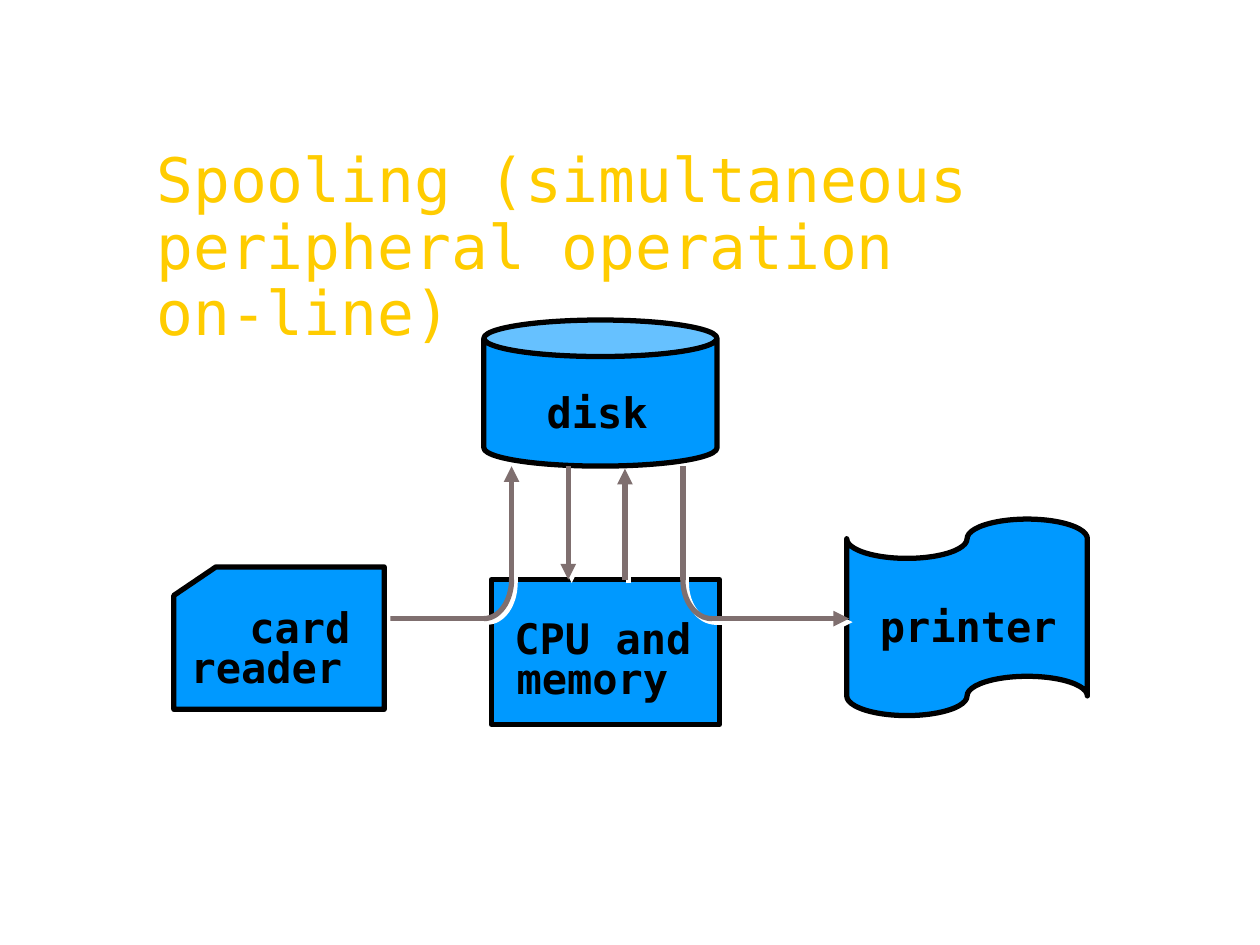
from dataclasses import dataclass
from math import cos, pi, sin

from lxml import etree
from pptx import Presentation
from pptx.dml.color import RGBColor
from pptx.enum.shapes import MSO_CONNECTOR, MSO_SHAPE
from pptx.enum.text import MSO_ANCHOR, PP_ALIGN
from pptx.oxml.ns import qn
from pptx.util import Inches, Pt

CAN = MSO_SHAPE.CAN
TAPE = MSO_SHAPE.FLOWCHART_PUNCHED_TAPE
CARD = MSO_SHAPE.FLOWCHART_CARD
RECT = MSO_SHAPE.RECTANGLE
LINE = MSO_CONNECTOR.STRAIGHT
TOP = MSO_ANCHOR.TOP
LEFT, MID = PP_ALIGN.LEFT, PP_ALIGN.CENTER


@dataclass(frozen=True)
class Theme:
    font: str = "DejaVu Sans Mono"
    title: str = "FFCC00"
    body: str = "0099FF"
    ink: str = "000000"
    flow: str = "7F6F6F"
    shade: str = "FFFFFF"
    big: int = 35
    text: int = 24
    small: int = 20
    line: int = 3


class Deck:
    """Slide with a grid of 100 columns by 75 rows."""

    def __init__(self, theme):
        self.theme = theme
        self.prs = Presentation()
        self.prs.slide_width = Inches(10)
        self.prs.slide_height = Inches(7.5)
        self.slide = self.prs.slides.add_slide(self.prs.slide_layouts[5])
        self.shapes = self.slide.shapes

    def grid(self, *cells):
        step = self.prs.slide_width / 100
        return [round(cell * step) for cell in cells]

    def run(self, para, text, size, color, bold=False):
        run = para.add_run()
        run.text = text
        run.font.name = self.theme.font
        run.font.size = Pt(size)
        run.font.bold = bold
        run.font.color.rgb = RGBColor.from_string(color)

    def title(self, area, lines):
        box = self.shapes.title
        box.left, box.top, box.width, box.height = self.grid(*area)
        frame = box.text_frame
        frame.word_wrap = True
        frame.vertical_anchor = TOP
        para = frame.paragraphs[0]
        para.alignment = LEFT
        para.line_spacing = 0.9
        for i, line in enumerate(lines):
            if i:
                para.add_line_break()
            self.run(para, line, self.theme.big, self.theme.title)

    def finish(self, item, color):
        """Set the outline and a hard offset shadow."""
        item.line.color.rgb = RGBColor.from_string(color)
        item.line.width = Pt(self.theme.line)
        props = item._element.spPr
        fx = etree.SubElement(props, qn("a:effectLst"))
        cast = etree.SubElement(fx, qn("a:outerShdw"), dist=str(Pt(2.8)),
                                dir="2700000", algn="ctr", rotWithShape="0")
        etree.SubElement(cast, qn("a:srgbClr"), val=self.theme.shade)

    def shape(self, kind, area):
        item = self.shapes.add_shape(kind, *self.grid(*area))
        item.fill.solid()
        item.fill.fore_color.rgb = RGBColor.from_string(self.theme.body)
        self.finish(item, self.theme.ink)

    def label(self, area, paras, align=MID, space=1.0, indent=0):
        """Each paragraph is a list of (text, size) runs."""
        frame = self.shapes.add_textbox(*self.grid(*area)).text_frame
        frame.word_wrap = True
        for i, runs in enumerate(paras):
            para = frame.add_paragraph() if i else frame.paragraphs[0]
            para.alignment = align
            para.line_spacing = space
            if indent and not i:
                para._p.get_or_add_pPr().set("marL", str(self.grid(indent)[0]))
            for text, size in runs:
                self.run(para, text, size, self.theme.ink, True)

    def link(self, start, end, head=True):
        item = self.shapes.add_connector(LINE, *self.grid(*start, *end))
        self.finish(item, self.theme.flow)
        if head:
            edge = item._element.spPr.find(qn("a:ln"))
            etree.SubElement(edge, qn("a:tailEnd"), type="triangle")

    def bend(self, hub, wide, high, steps=16):
        """Quarter ellipse from below the hub to its side."""
        x, y = hub
        turns = [pi / 2 * i / steps for i in range(steps + 1)]
        dots = [tuple(self.grid(x + wide * sin(t), y + high * cos(t)))
                for t in turns]
        path = self.shapes.build_freeform(*dots[0])
        path.add_line_segments(dots[1:], close=False)
        item = path.convert_to_shape()
        item.fill.background()
        self.finish(item, self.theme.flow)


def main():
    theme = Theme()
    deck = Deck(theme)
    text, small = theme.text, theme.small
    deck.title((11.4, 11.4, 73.6, 16.7),
               ["Spooling (simultaneous peripheral operation", "on-line)"])

    # Devices
    deck.shape(CAN, (38.4, 25.4, 18.5, 11.6))
    deck.shape(TAPE, (67.2, 41.2, 19.1, 15.6))
    deck.shape(RECT, (39, 46, 18.1, 11.5))

    # Labels
    deck.label((42.4, 30.2, 11.3, 5.1), [[("disk", text)]], LEFT)
    deck.label((38.8, 48.9, 18.1, 8.1),
               [[("CPU and memory", text), (" ", small)]], space=0.8)
    deck.label((65.7, 47.2, 22.3, 4.9), [[("printer", text)]])

    # Rounded paths: card reader to disk, disk to printer
    disk, turn, base = 37, 46, 49.1
    deck.link((27.9, base), (38.4, base), False)
    deck.link((40.6, turn), (40.6, disk))
    deck.bend((38.4, turn), 2.2, base - turn)
    deck.link((54.2, turn), (54.2, disk), False)
    deck.bend((56.5, turn), -2.3, base - turn)
    deck.link((56.4, base), (67.4, base))

    # Disk and CPU exchange
    deck.link((45.1, disk), (45.1, turn))
    deck.link((49.6, turn), (49.6, disk + 0.2))

    # Card reader
    deck.shape(CARD, (13.8, 45, 16.7, 11.3))
    deck.label((13.1, 48, 18.1, 8.3),
               [[("card", text)], [("reader ", text)]], space=0.8, indent=3.3)

    deck.prs.save("out.pptx")


if __name__ == "__main__":
    main()
